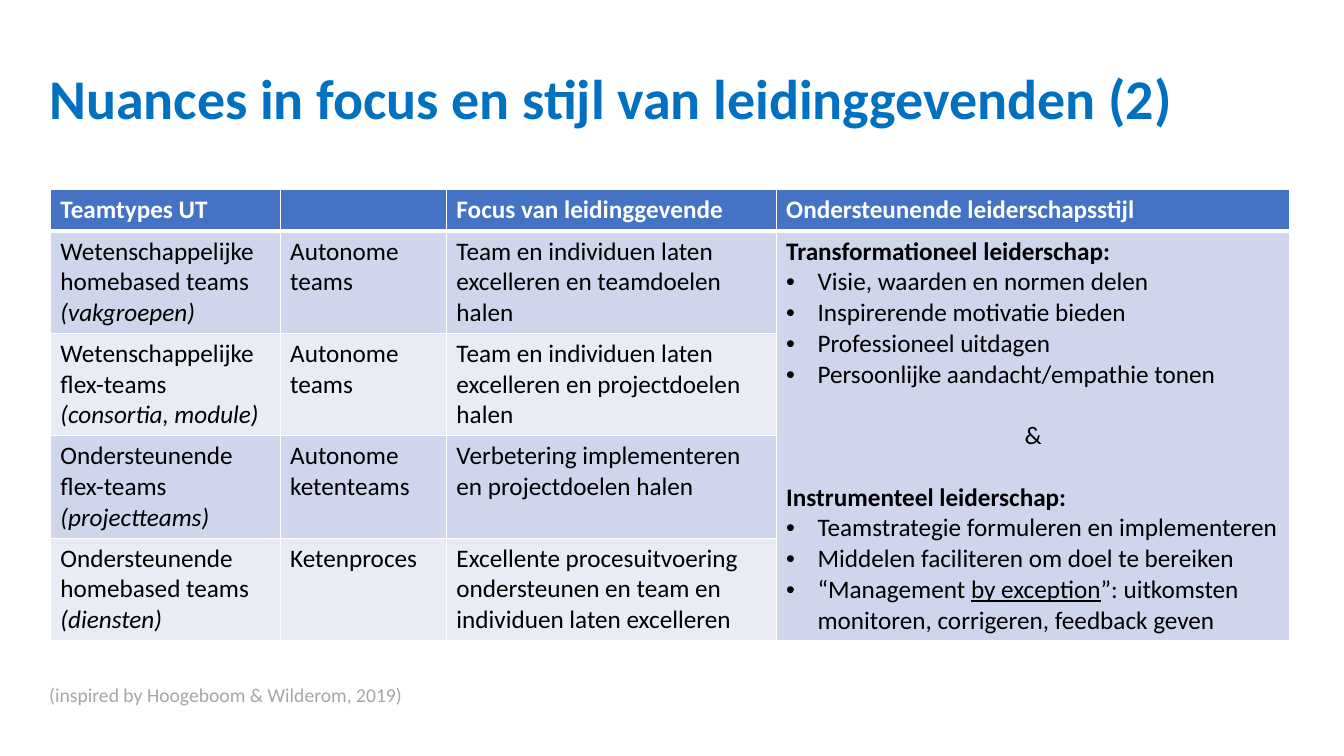
"""Build a slide with a table of team types and leadership focus and style."""
from dataclasses import dataclass

import pptx
import pptx.dml.color
import pptx.enum.text
import pptx.oxml
import pptx.oxml.ns
import pptx.slide
import pptx.table
import pptx.text.text
import pptx.util
from pptx.dml.color import RGBColor
from pptx.util import Cm

FONT = "Calibri"
WHITE = RGBColor(0xFF, 0xFF, 0xFF)
BLACK = RGBColor(0x00, 0x00, 0x00)
TITLE_BLUE = RGBColor(0x00, 0x70, 0xC0)
HEADER_BLUE = RGBColor(0x44, 0x72, 0xC4)
BAND_DARK = RGBColor(0xCF, 0xD5, 0xEA)
BAND_LIGHT = RGBColor(0xE9, 0xEB, 0xF5)
SOURCE_GREY = RGBColor(0xA6, 0xA6, 0xA6)

COLUMN_WIDTHS = (5.79, 4.19, 8.31, 12.95)
HEADER_HEIGHT = 1.04
BODY_HEIGHT = 2.58
STYLE_COLUMN = 3
BULLET_INDENT = Cm(0.79)
BLANK_LINE = pptx.util.Pt(22)


@dataclass(frozen=True)
class TextBox:
    text: str
    left: float
    top: float
    width: float
    height: float
    size: int
    color: RGBColor
    bold: bool = False
    line_spacing: float = 1.0


@dataclass(frozen=True)
class TeamType:
    name: str
    example: str
    autonomy: str
    focus: str


@dataclass(frozen=True)
class LeadershipStyle:
    heading: str
    practices: tuple[str, ...]


TEXT_BOXES = (
    TextBox("Nuances in focus en stijl van leidinggevenden (2)",
            0.99, 0.71, 32.03, 3.68, 40, TITLE_BLUE, True, 0.9),
    TextBox("(inspired by Hoogeboom & Wilderom, 2019)",
            0.99, 17.07, 32.03, 0.86, 14, SOURCE_GREY),
)
HEADERS = ("Teamtypes UT", "", "Focus van leidinggevende", "Ondersteunende leiderschapsstijl")
TEAM_TYPES = (
    TeamType("Wetenschappelijke homebased teams ", "(vakgroepen)", "Autonome teams",
             "Team en individuen laten excelleren en teamdoelen halen"),
    TeamType("Wetenschappelijke flex-teams ", "(consortia, module)", "Autonome teams",
             "Team en individuen laten excelleren en projectdoelen halen"),
    TeamType("Ondersteunende flex-teams ", "(projectteams)", "Autonome ketenteams",
             "Verbetering implementeren en projectdoelen halen"),
    TeamType("Ondersteunende homebased teams ", "(diensten)", "Ketenproces",
             "Excellente procesuitvoering ondersteunen en team en individuen laten excelleren"),
)
TRANSFORMATIONAL = LeadershipStyle("Transformationeel leiderschap:", (
    "Visie, waarden en normen delen",
    "Inspirerende motivatie bieden",
    "Professioneel uitdagen",
    "Persoonlijke aandacht/empathie tonen",
))
INSTRUMENTAL = LeadershipStyle("Instrumenteel leiderschap:", (
    "Teamstrategie formuleren en implementeren",
    "Middelen faciliteren om doel te bereiken",
    "“Management ",
))
UNDERLINED = "by exception"
AFTER_UNDERLINED = "”: uitkomsten monitoren, corrigeren, feedback geven"


def format_runs(paragraph: pptx.text.text._Paragraph, size: int, color: RGBColor,
                bold: bool = False) -> None:
    for run in paragraph.runs:
        run.font.name = FONT
        run.font.size = pptx.util.Pt(size)
        run.font.color.rgb = color
        run.font.bold = bold


def add_text_box(slide: pptx.slide.Slide, box: TextBox) -> None:
    shape = slide.shapes.add_textbox(Cm(box.left), Cm(box.top), Cm(box.width), Cm(box.height))
    text_frame = shape.text_frame
    text_frame.word_wrap = True
    text_frame.vertical_anchor = pptx.enum.text.MSO_ANCHOR.MIDDLE
    text_frame.text = box.text
    paragraph = text_frame.paragraphs[0]
    paragraph.line_spacing = box.line_spacing
    format_runs(paragraph, box.size, box.color, box.bold)


def style_cell(cell: pptx.table._Cell, fill: RGBColor, is_header: bool) -> None:
    properties = cell._tc.get_or_add_tcPr()
    widths = {"lnL": 1, "lnR": 1, "lnT": 1, "lnB": 3 if is_header else 1}
    for side, width in widths.items():
        properties.append(pptx.oxml.parse_xml(
            f'<a:{side} {pptx.oxml.ns.nsdecls("a")} w="{pptx.util.Pt(width)}">'
            f'<a:solidFill><a:srgbClr val="{WHITE}"/></a:solidFill></a:{side}>'))
    cell.fill.solid()
    cell.fill.fore_color.rgb = fill
    for paragraph in cell.text_frame.paragraphs:
        format_runs(paragraph, 18, WHITE if is_header else BLACK, is_header)


def add_bullet(paragraph: pptx.text.text._Paragraph) -> None:
    properties = paragraph._p.get_or_add_pPr()
    properties.set("marL", str(BULLET_INDENT))
    properties.set("indent", str(-BULLET_INDENT))
    namespace = pptx.oxml.ns.nsdecls("a")
    properties.append(pptx.oxml.parse_xml(f'<a:buFont {namespace} typeface="Arial"/>'))
    properties.append(pptx.oxml.parse_xml(f'<a:buChar {namespace} char="•"/>'))


def fill_styles(cell: pptx.table._Cell) -> None:
    cell.vertical_anchor = pptx.enum.text.MSO_ANCHOR.MIDDLE
    styles = (TRANSFORMATIONAL, INSTRUMENTAL)
    blocks = ["\n".join((style.heading, *style.practices)) for style in styles]
    cell.text_frame.text = "\n&\n".join(blocks)
    paragraphs = cell.text_frame.paragraphs
    for text in (UNDERLINED, AFTER_UNDERLINED):
        run = paragraphs[-1].add_run()
        run.text = text
        run.font.underline = text == UNDERLINED
    headings = [style.heading for style in styles]
    for paragraph in paragraphs:
        is_heading = paragraph.text in headings
        format_runs(paragraph, 18, BLACK, is_heading)
        if paragraph.text == "&":
            paragraph.alignment = pptx.enum.text.PP_ALIGN.CENTER
            paragraph.space_before = paragraph.space_after = BLANK_LINE
        elif not is_heading:
            add_bullet(paragraph)


def add_team_table(slide: pptx.slide.Slide) -> None:
    row_count = len(TEAM_TYPES) + 1
    frame = slide.shapes.add_table(
        row_count, len(HEADERS), Cm(1.27), Cm(4.78), Cm(sum(COLUMN_WIDTHS)),
        Cm(HEADER_HEIGHT + BODY_HEIGHT * len(TEAM_TYPES)))
    table = frame.table
    for column, width in zip(table.columns, COLUMN_WIDTHS):
        column.width = Cm(width)
    for index, row in enumerate(table.rows):
        row.height = Cm(BODY_HEIGHT if index else HEADER_HEIGHT)
    for column, header in enumerate(HEADERS):
        cell = table.cell(0, column)
        cell.text_frame.text = header
        style_cell(cell, HEADER_BLUE, True)
    for row, team in enumerate(TEAM_TYPES, start=1):
        band = BAND_DARK if row % 2 else BAND_LIGHT
        for column, text in enumerate((team.name, team.autonomy, team.focus)):
            cell = table.cell(row, column)
            cell.text_frame.text = text
            if column == 0:
                example = cell.text_frame.paragraphs[0].add_run()
                example.text = team.example
                example.font.italic = True
            style_cell(cell, band, False)
        style_cell(table.cell(row, STYLE_COLUMN), BAND_DARK, False)
    styles_cell = table.cell(1, STYLE_COLUMN)
    styles_cell.merge(table.cell(row_count - 1, STYLE_COLUMN))
    fill_styles(styles_cell)


def main() -> None:
    presentation = pptx.Presentation()
    presentation.slide_width = Cm(33.87)
    presentation.slide_height = Cm(19.05)
    slide = presentation.slides.add_slide(presentation.slide_layouts[6])
    for box in TEXT_BOXES:
        add_text_box(slide, box)
    add_team_table(slide)
    presentation.save("out.pptx")


if __name__ == "__main__":
    main()
